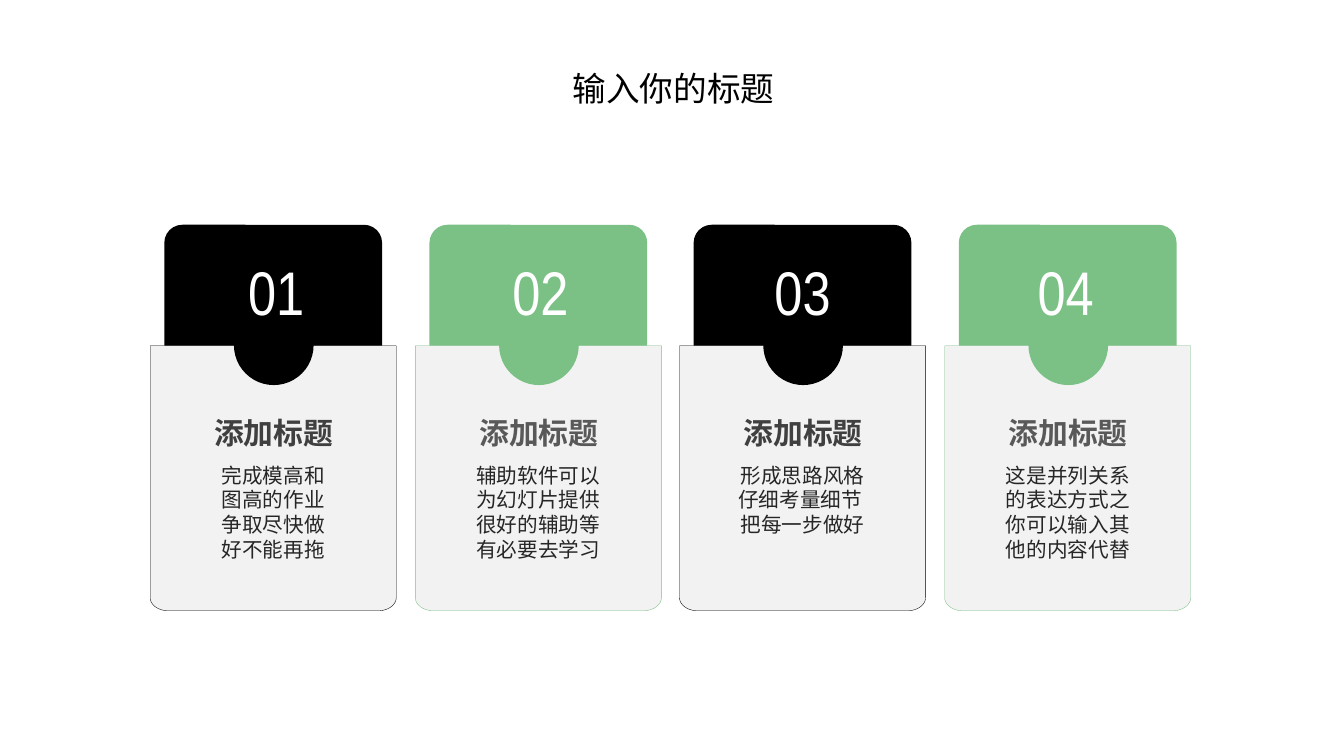
from dataclasses import dataclass
from math import cos, pi, sin
from typing import Any

from lxml.etree import SubElement
from pptx import Presentation
from pptx.dml.color import RGBColor
from pptx.enum.shapes import MSO_SHAPE as Preset
from pptx.enum.text import MSO_ANCHOR as Anchor, MSO_AUTO_SIZE as AutoSize, PP_ALIGN as Align
from pptx.oxml.ns import qn
from pptx.util import Pt

PX = 9144
CARD_LEFT, CARD_TOP, CARD_WIDTH, CARD_HEIGHT = 149, 343, 244, 263
CARD_SPAN = 788
CORNER_WIDTH, CORNER_HEIGHT, CORNER_STEPS = 18, 13, 12
TAB_TOP, TAB_WIDTH, TAB_HEIGHT = 223, 216, 199
NOTCH_TOP, NOTCH_SIZE = 303, 79
CHINESE_FONT = "Noto Sans CJK SC"


@dataclass(frozen=True)
class Box:
    left: int
    top: int
    width: int
    height: int

    def emu(self) -> list[int]:
        return [value * PX for value in (self.left, self.top, self.width, self.height)]


@dataclass(frozen=True)
class TextStyle:
    size: float
    color: str
    font: str = CHINESE_FONT
    bold: bool = False
    align: Align = Align.CENTER


@dataclass(frozen=True)
class Card:
    number: str
    number_shift: int
    accent: str
    heading_color: str
    lines: tuple[str, ...]


CARDS = (
    Card("01", 3, "000000", "404040", ("完成模高和", "图高的作业", "争取尽快做", "好不能再拖")),
    Card("02", 2, "7BC185", "595959", ("辅助软件可以", "为幻灯片提供", "很好的辅助等", "有必要去学习")),
    Card("03", 0, "000000", "404040", ("形成思路风格", "仔细考量细节 ", "把每一步做好")),
    Card("04", -2, "7BC185", "595959", ("这是并列关系", "的表达方式之", "你可以输入其", "他的内容代替")),
)


def paint(target: Any, color: str) -> None:
    if hasattr(target, "solid"):
        target.solid()
        target = target.fore_color
    target.rgb = RGBColor.from_string(color)


def set_values(target: Any, values: dict[str, Any]) -> None:
    for name, value in values.items():
        setattr(target, name, value)


def write_text(shape: Any, lines: tuple[str, ...], style: TextStyle) -> None:
    frame = shape.text_frame
    set_values(frame, {
        "text": "\n".join(lines),
        "word_wrap": True,
        "auto_size": AutoSize.SHAPE_TO_FIT_TEXT,
        "vertical_anchor": Anchor.TOP,
    })
    for paragraph in frame.paragraphs:
        paragraph.alignment = style.align
        for run in paragraph.runs:
            set_values(run.font, {"name": style.font, "size": Pt(style.size), "bold": style.bold})
            paint(run.font.color, style.color)
            east_asian = SubElement(run.font._element, qn("a:ea"))
            east_asian.set("typeface", style.font)


def add_text(shapes: Any, box: Box, lines: tuple[str, ...], style: TextStyle) -> None:
    write_text(shapes.add_textbox(*box.emu()), lines, style)


def add_solid(shapes: Any, preset: Preset, box: Box, color: str) -> Any:
    shape = shapes.add_shape(preset, *box.emu())
    shape.shadow.inherit = False
    paint(shape.fill, color)
    shape.line.fill.background()
    return shape


def add_pocket(shapes: Any, box: Box, line_color: str) -> None:
    right, bottom = box.left + box.width, box.top + box.height
    angles = [step * pi / 2 / CORNER_STEPS for step in range(CORNER_STEPS + 1)]
    right_corner = [
        (right - CORNER_WIDTH * (1 - cos(angle)), bottom - CORNER_HEIGHT * (1 - sin(angle)))
        for angle in angles
    ]
    left_corner = [(box.left + right - x, y) for x, y in reversed(right_corner)]
    builder = shapes.build_freeform(box.left * PX, box.top * PX)
    outline = [(right, box.top), *right_corner, *left_corner]
    builder.add_line_segments([(round(x * PX), round(y * PX)) for x, y in outline], close=True)
    pocket = builder.convert_to_shape()
    pocket.shadow.inherit = False
    paint(pocket.fill, "F2F2F2")
    paint(pocket.line.fill, line_color)
    pocket.line.width = Pt(0.25)


def add_card(slide: Any, card: Card, left: int) -> None:
    shapes = slide.shapes.add_group_shape().shapes
    center = left + CARD_WIDTH // 2

    def centered(top: int, width: int, height: int, shift: int = 0) -> Box:
        return Box(center + shift - width // 2, top, width, height)

    tab = add_solid(shapes, Preset.ROUNDED_RECTANGLE, centered(TAB_TOP, TAB_WIDTH, TAB_HEIGHT), card.accent)
    tab.adjustments[0] = 0.09
    add_pocket(shapes, Box(left, CARD_TOP, CARD_WIDTH, CARD_HEIGHT), card.accent)
    add_solid(shapes, Preset.OVAL, centered(NOTCH_TOP, NOTCH_SIZE, NOTCH_SIZE), card.accent)
    add_text(shapes, centered(247, 118, 84, card.number_shift), (card.number,),
             TextStyle(44, "FFFFFF", "Arial Narrow"))
    add_text(shapes, centered(407, 147, 46), ("添加标题",),
             TextStyle(21.3, card.heading_color, bold=True))
    add_text(shapes, centered(454, 176, 10 + 25 * len(card.lines)), card.lines,
             TextStyle(14.7, "262626"))


def add_title(slide: Any) -> None:
    title = slide.shapes.title
    box = Box(558, 62, 264, 50)
    set_values(title, dict(zip(("left", "top", "width", "height"), box.emu())))
    write_text(title, ("输入你的标题",), TextStyle(24, "000000", align=Align.LEFT))


def main() -> None:
    presentation = Presentation()
    set_values(presentation, {"slide_width": 1333 * PX, "slide_height": 750 * PX})
    slide = presentation.slides.add_slide(presentation.slide_layouts.get_by_name("Title Only"))
    add_title(slide)
    for index, card in enumerate(CARDS):
        add_card(slide, card, CARD_LEFT + round(index * CARD_SPAN / (len(CARDS) - 1)))
    presentation.save("out.pptx")


if __name__ == "__main__":
    main()
